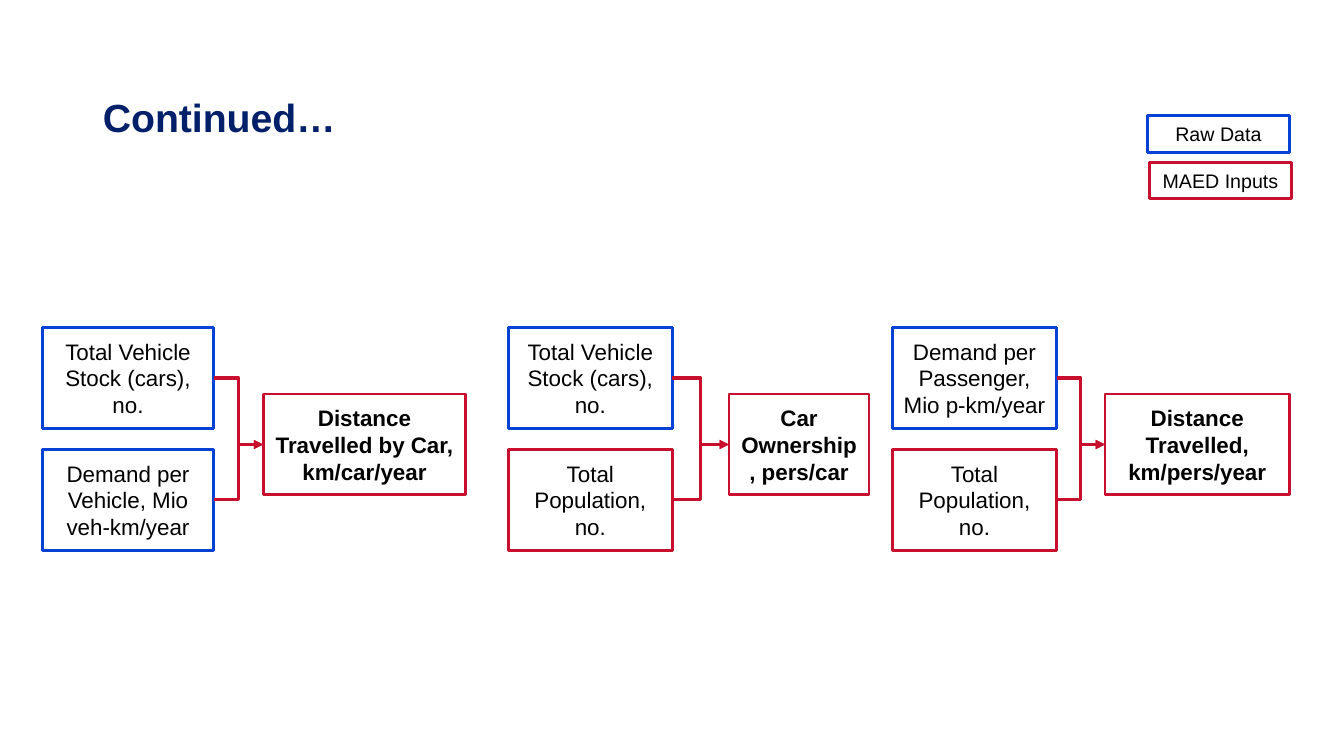
"""Build the slide that shows how raw data turns into MAED inputs."""
import pptx
import pptx.util
import pptx.dml.color
import pptx.enum.shapes
import pptx.enum.text
import pptx.oxml
import pptx.oxml.ns
from pptx.util import Inches

COLORS = {"raw": "0342D4", "input": "C8102E", "title": "012069", "text": "000000", "fill": "FFFFFF"}
RIGHT_SIDE, LEFT_SIDE = 3, 1


def color(name):
    return pptx.dml.color.RGBColor.from_string(COLORS[name])


def add_box(page, text, kind, left, top, width, height=1, size=16, bold=False):
    box = page.shapes.add_shape(
        pptx.enum.shapes.MSO_SHAPE.RECTANGLE, Inches(left), Inches(top), Inches(width), Inches(height))
    box.shadow.inherit = False
    box.fill.solid()
    box.fill.fore_color.rgb = color("fill")
    box.line.color.rgb = color(kind)
    box.line.width = pptx.util.Pt(2)
    frame = box.text_frame
    frame.word_wrap = True
    frame.vertical_anchor = pptx.enum.text.MSO_ANCHOR.MIDDLE
    para = frame.paragraphs[0]
    para.text = text
    para.alignment = pptx.enum.text.PP_ALIGN.CENTER
    para.font.name = "Arial"
    para.font.size = pptx.util.Pt(size)
    para.font.bold = bold
    para.font.color.rgb = color("text")
    return box


deck = pptx.Presentation()
deck.slide_width = Inches(13.33)
deck.slide_height = Inches(7.5)
page = deck.slides.add_slide(deck.slide_layouts[5])

title = page.shapes.title
title.left, title.top, title.width, title.height = Inches(0.92), Inches(0), Inches(11.5), Inches(1.45)
title.text_frame.text = "Continued…"
title.text_frame.word_wrap = True
title.text_frame.vertical_anchor = pptx.enum.text.MSO_ANCHOR.BOTTOM
heading = title.text_frame.paragraphs[0]
heading.alignment = pptx.enum.text.PP_ALIGN.LEFT
heading.line_spacing = 0.9
heading.font.name = "Arial"
heading.font.size = pptx.util.Pt(28)
heading.font.bold = True
heading.font.color.rgb = color("title")

add_box(page, "Raw Data", "raw", 11.38, 1.15, 1.41, 0.36, 14)
add_box(page, "MAED Inputs", "input", 11.4, 1.61, 1.41, 0.36, 14)

calculations = [
    (0.42, 1.7, ("Total Vehicle Stock (cars), no.", "raw"), ("Demand per Vehicle, Mio veh-km/year", "raw"),
     2.61, 2.01, "Distance Travelled by Car, km/car/year"),
    (5.04, 1.63, ("Total Vehicle Stock (cars), no.", "raw"), ("Total Population, no.", "input"),
     7.23, 1.39, "Car Ownership, pers/car"),
    (8.85, 1.63, ("Demand per Passenger, Mio p-km/year", "raw"), ("Total Population, no.", "input"),
     10.96, 1.83, "Distance Travelled, km/pers/year"),
]
for left, width, upper, lower, result_left, result_width, result_text in calculations:
    result = add_box(page, result_text, "input", result_left, 3.91, result_width, bold=True)
    for (text, kind), top in zip((upper, lower), (3.25, 4.46)):
        factor = add_box(page, text, kind, left, top, width)
        arrow = page.shapes.add_connector(pptx.enum.shapes.MSO_CONNECTOR.ELBOW, 0, 0, 0, 0)
        arrow.begin_connect(factor, RIGHT_SIDE)
        arrow.end_connect(result, LEFT_SIDE)
        arrow.line.color.rgb = color("input")
        arrow.line.width = pptx.util.Pt(2.25)
        head = pptx.oxml.parse_xml(f'<a:tailEnd {pptx.oxml.ns.nsdecls("a")} type="triangle"/>')
        arrow.line._get_or_add_ln().append(head)
        arrow._element.spPr.append(pptx.oxml.parse_xml(f'<a:effectLst {pptx.oxml.ns.nsdecls("a")}/>'))

deck.save("out.pptx")
